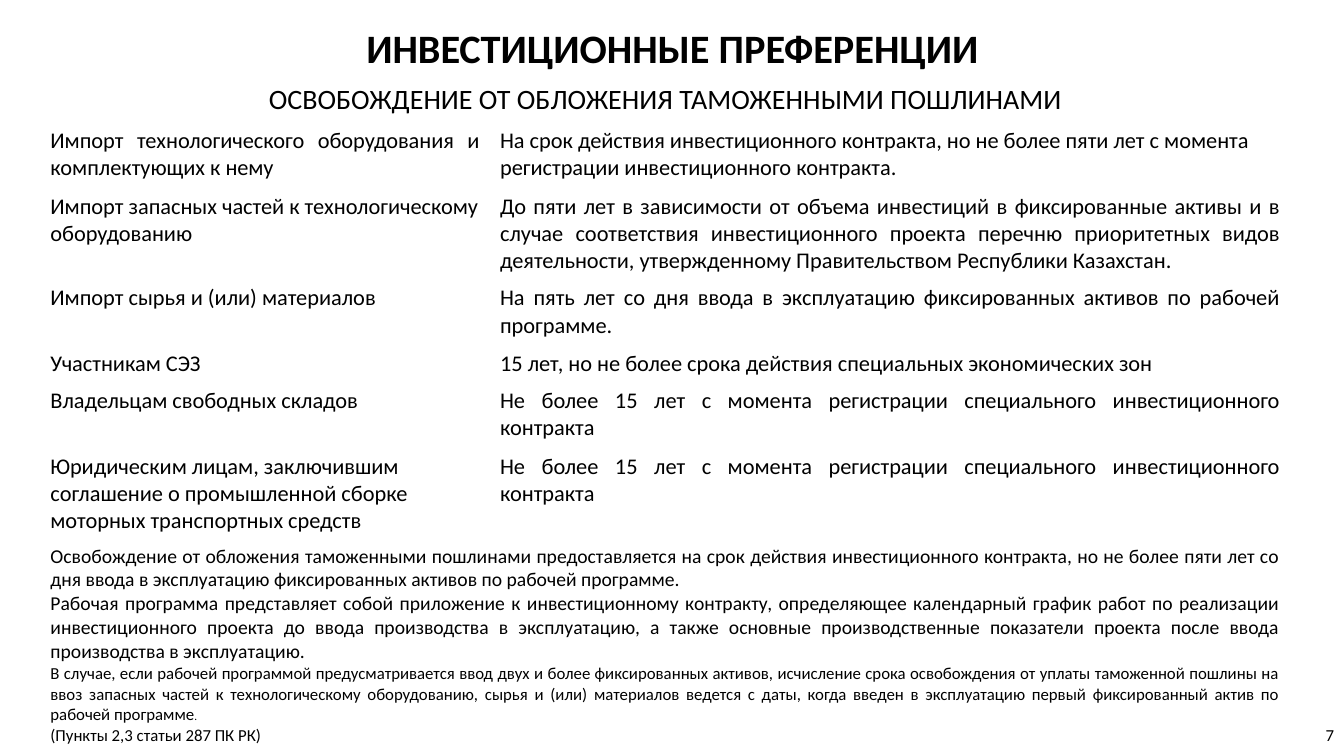
from pptx import Presentation
from pptx import util as u
from pptx.dml.color import RGBColor
from pptx.enum import text

WIDTH, HEIGHT = u.Inches(13.33), u.Inches(7.5)
BLACK = RGBColor(0, 0, 0)
FONT = "Calibri"
LEFT, CENTER, RIGHT, JUSTIFY = (
    text.PP_ALIGN.LEFT, text.PP_ALIGN.CENTER,
    text.PP_ALIGN.RIGHT, text.PP_ALIGN.JUSTIFY)

TITLE = "ИНВЕСТИЦИОННЫЕ ПРЕФЕРЕНЦИИ"
HEADING = "ОСВОБОЖДЕНИЕ ОТ ОБЛОЖЕНИЯ ТАМОЖЕННЫМИ ПОШЛИНАМИ"
SPECIAL_TERM = ("Не более 15 лет с момента регистрации специального "
                "инвестиционного контракта")

# Beneficiary, its alignment, exemption term, its alignment
EXEMPTIONS = [
    ("Импорт технологического оборудования и комплектующих к нему", JUSTIFY,
     "На срок действия инвестиционного контракта, но не более пяти лет "
     "с момента регистрации инвестиционного контракта.", LEFT),
    ("Импорт запасных частей к технологическому оборудованию", LEFT,
     "До пяти лет в зависимости от объема инвестиций в фиксированные активы "
     "и в случае соответствия инвестиционного проекта перечню приоритетных "
     "видов деятельности, утвержденному Правительством Республики Казахстан.",
     JUSTIFY),
    ("Импорт сырья и (или) материалов", LEFT,
     "На пять лет со дня ввода в эксплуатацию фиксированных активов "
     "по рабочей программе.", JUSTIFY),
    ("Участникам СЭЗ", LEFT,
     "15 лет, но не более срока действия специальных экономических зон",
     JUSTIFY),
    ("Владельцам свободных складов", LEFT, SPECIAL_TERM, JUSTIFY),
    ("Юридическим лицам, заключившим соглашение о промышленной сборке "
     "моторных транспортных средств", LEFT, SPECIAL_TERM, JUSTIFY),
]

# Closing notes with their text sizes
NOTES = [
    ("Освобождение от обложения таможенными пошлинами предоставляется на срок "
     "действия инвестиционного контракта, но не более пяти лет со дня ввода "
     "в эксплуатацию фиксированных активов по рабочей программе.", 14),
    ("Рабочая программа представляет собой приложение к инвестиционному "
     "контракту, определяющее календарный график работ по реализации "
     "инвестиционного проекта до ввода производства в эксплуатацию, а также "
     "основные производственные показатели проекта после ввода производства "
     "в эксплуатацию.", 14),
    ("В случае, если рабочей программой предусматривается ввод двух и более "
     "фиксированных активов, исчисление срока освобождения от уплаты "
     "таможенной пошлины на ввоз запасных частей к технологическому "
     "оборудованию, сырья и (или) материалов ведется с даты, когда введен "
     "в эксплуатацию первый фиксированный актив по рабочей программе", 12),
    ("(Пункты 2,3 статьи 287 ПК РК)", 12),
]
# Each row is as tall as its text needs
ONE_LINE, TWO_LINES, THREE_LINES = 0.37, 0.65, 0.91
ROW_HEIGHTS = [0.44, TWO_LINES, THREE_LINES, TWO_LINES, ONE_LINE,
               TWO_LINES, THREE_LINES, 2.1]
COLUMN_WIDTHS = [4.46, 7.94]


def style_run(run, size, bold=False):
    run.font.name = FONT
    run.font.size = u.Pt(size)
    run.font.bold = bold
    run.font.color.rgb = BLACK


def write(paragraph, wording, size, align, bold=False):
    paragraph.text = wording
    paragraph.alignment = align
    for run in paragraph.runs:
        style_run(run, size, bold)


def add_label(slide, shares, wording, size, align, bold=False):
    """Place a text box; shares are left, top, width, height of the slide."""
    box = [int(share * side)
           for share, side in zip(shares, (WIDTH, HEIGHT) * 2)]
    frame = slide.shapes.add_textbox(*box).text_frame
    frame.word_wrap = True
    frame.vertical_anchor = text.MSO_ANCHOR.MIDDLE
    write(frame.paragraphs[0], wording, size, align, bold)
    return frame


def fill_notes(cell):
    frame = cell.text_frame
    for index, (wording, size) in enumerate(NOTES):
        note = frame.add_paragraph() if index else frame.paragraphs[0]
        write(note, wording, size, JUSTIFY)
    # The third note closes with a smaller full stop
    stop = frame.paragraphs[2].add_run()
    stop.text = "."
    style_run(stop, 8)


def add_exemptions(slide):
    table = slide.shapes.add_table(
        len(ROW_HEIGHTS), len(COLUMN_WIDTHS),
        int(WIDTH * 0.03), int(HEIGHT * 0.103),
        u.Inches(sum(COLUMN_WIDTHS)), u.Inches(sum(ROW_HEIGHTS))).table
    table.first_row = table.horz_banding = False
    for column, width in zip(table.columns, COLUMN_WIDTHS):
        column.width = u.Inches(width)
    for row, height in zip(table.rows, ROW_HEIGHTS):
        row.height = u.Inches(height)
    for cell in table.iter_cells():
        cell.fill.background()

    # Heading and notes span both columns
    last = len(ROW_HEIGHTS) - 1
    for row in (0, last):
        table.cell(row, 0).merge(table.cell(row, 1))
    write(table.cell(0, 0).text_frame.paragraphs[0], HEADING, 20, CENTER)
    fill_notes(table.cell(last, 0))

    for row, (who, who_align, term, term_align) in enumerate(EXEMPTIONS, 1):
        write(table.cell(row, 0).text_frame.paragraphs[0], who, 16, who_align)
        write(table.cell(row, 1).text_frame.paragraphs[0], term, 16, term_align)


def main():
    deck = Presentation()
    deck.slide_width, deck.slide_height = WIDTH, HEIGHT
    slide = deck.slides.add_slide(deck.slide_layouts[6])

    # Title
    title = add_label(slide, (0.069, 0.031, 0.863, 0.072),
                      TITLE, 28.8, CENTER, bold=True)
    title.paragraphs[0].line_spacing = 0.9

    # Table of exemptions
    add_exemptions(slide)

    # Page number in the bottom right corner
    add_label(slide, (0.808, 0.945, 0.192, 0.055), "7", 12, RIGHT)

    deck.save("out.pptx")


if __name__ == "__main__":
    main()
